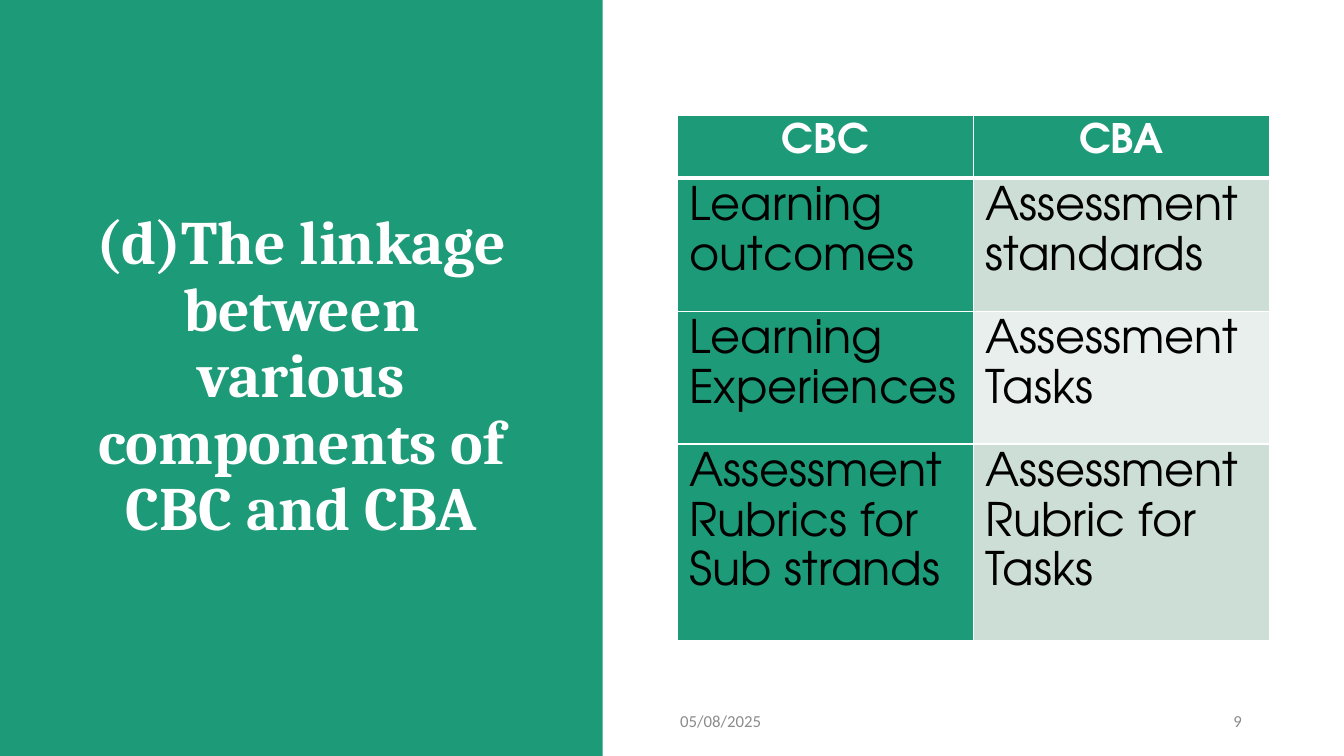
from pptx import Presentation
from pptx.dml.color import RGBColor
from pptx.enum.shapes import MSO_SHAPE
from pptx.enum.text import MSO_ANCHOR, PP_ALIGN
from pptx.oxml import parse_xml
from pptx.oxml.ns import nsdecls
from pptx.util import Cm, Pt

GREEN = RGBColor(0x1D, 0x9A, 0x78)
PALE = RGBColor(0xCD, 0xDE, 0xD6)
PALER = RGBColor(0xE8, 0xEF, 0xEC)
GREY = RGBColor(0x8C, 0x8C, 0x8C)
WHITE = RGBColor(0xFF, 0xFF, 0xFF)
BLACK = RGBColor(0, 0, 0)

TITLE = "(d)The linkage between various components of CBC and CBA"
LINKAGE = [
    ("CBC", "CBA"),
    ("Learning outcomes", "Assessment standards"),
    ("Learning Experiences", "Assessment Tasks"),
    ("Assessment Rubrics for Sub strands", "Assessment Rubric for Tasks"),
]
ROW_HEIGHTS = [1.57, 3.35, 3.35, 4.95]

TITLE_FONT = {"name": "Cambria", "size": Pt(44), "bold": True}
HEADER_FONT = {"name": "TeX Gyre Adventor", "size": Pt(29), "bold": True}
BODY_FONT = {"name": "TeX Gyre Adventor", "size": Pt(33), "bold": False}
FOOTER_FONT = {"name": "Calibri", "size": Pt(12), "bold": False}
TITLE_LAYOUT = {"alignment": PP_ALIGN.CENTER, "line_spacing": 0.9}
CELL_LAYOUT = {"line_spacing": 1.15, "space_after": Pt(8)}
CELL_MARGINS = {"margin_left": Cm(0.3), "margin_right": Cm(0.3),
                "margin_top": Cm(0.05), "margin_bottom": 0}


def apply_format(target, values):
    for name, value in values.items():
        setattr(target, name, value)


def write_text(text_frame, text, font, color, layout):
    paragraph = text_frame.paragraphs[0]
    apply_format(paragraph, layout)
    run = paragraph.add_run()
    run.text = text
    apply_format(run.font, font)
    run.font.color.rgb = color


def add_text(slide, box, text, font, color, layout):
    text_frame = slide.shapes.add_textbox(*box).text_frame
    apply_format(text_frame, {"word_wrap": True,
                              "vertical_anchor": MSO_ANCHOR.MIDDLE})
    write_text(text_frame, text, font, color, layout)


def add_title_panel(slide, left, top, width, height):
    panel = slide.shapes.add_shape(MSO_SHAPE.RECTANGLE, left, top, width, height)
    panel.shadow.inherit = False
    panel.fill.solid()
    panel.fill.fore_color.rgb = GREEN
    panel.line.fill.background()
    margin_x, margin_y = Cm(1.73), Cm(1.78)
    title_box = (left + margin_x, top + margin_y,
                 width - 2 * margin_x, height - 2 * margin_y)
    add_text(slide, title_box, TITLE, TITLE_FONT, WHITE, TITLE_LAYOUT)


def add_cell_borders(cell, widths):
    """Draw white borders; widths maps the sides L, R, T, B to points."""
    properties = cell._tc.get_or_add_tcPr()
    for position, (side, width) in enumerate(widths.items()):
        properties.insert(position, parse_xml(
            f'<a:ln{side} {nsdecls("a")} w="{Pt(width)}"><a:solidFill>'
            f'<a:srgbClr val="{WHITE}"/></a:solidFill></a:ln{side}>'))


def add_linkage_table(slide, left, top, width, height):
    table = slide.shapes.add_table(len(LINKAGE), 2, left, top, width, height).table
    for column in table.columns:
        column.width = width // 2
    for row_index, (texts, row_height) in enumerate(zip(LINKAGE, ROW_HEIGHTS)):
        table.rows[row_index].height = Cm(row_height)
        header = row_index == 0
        for column_index, text in enumerate(texts):
            cell = table.cell(row_index, column_index)
            apply_format(cell, CELL_MARGINS)
            cell.fill.solid()
            band = PALE if row_index % 2 else PALER
            cell.fill.fore_color.rgb = GREEN if header or column_index == 0 else band
            add_cell_borders(cell, {"L": 1, "R": 1, "T": 3 if row_index == 1 else 1,
                                    "B": 3 if header else 1})
            alignment = PP_ALIGN.CENTER if header else PP_ALIGN.LEFT
            write_text(cell.text_frame, text,
                       HEADER_FONT if header else BODY_FONT,
                       WHITE if header else BLACK,
                       {**CELL_LAYOUT, "alignment": alignment})


def add_footer(slide, left, top, width, height):
    field_width = Cm(7.62)
    fields = [("05/08/2025", left, PP_ALIGN.LEFT),
              ("9", left + width - field_width, PP_ALIGN.RIGHT)]
    for text, field_left, alignment in fields:
        add_text(slide, (field_left, top, field_width, height), text,
                 FOOTER_FONT, GREY, {"alignment": alignment})


def main():
    presentation = Presentation()
    presentation.slide_width = Cm(33.87)
    presentation.slide_height = Cm(19.05)
    slide = presentation.slides.add_slide(presentation.slide_layouts[6])
    add_title_panel(slide, 0, 0, Cm(15.19), presentation.slide_height)
    add_footer(slide, Cm(16.89), Cm(17.65), Cm(14.66), Cm(1.02))
    add_linkage_table(slide, Cm(17.07), Cm(2.92), Cm(14.92), Cm(sum(ROW_HEIGHTS)))
    presentation.save("out.pptx")


if __name__ == "__main__":
    main()
